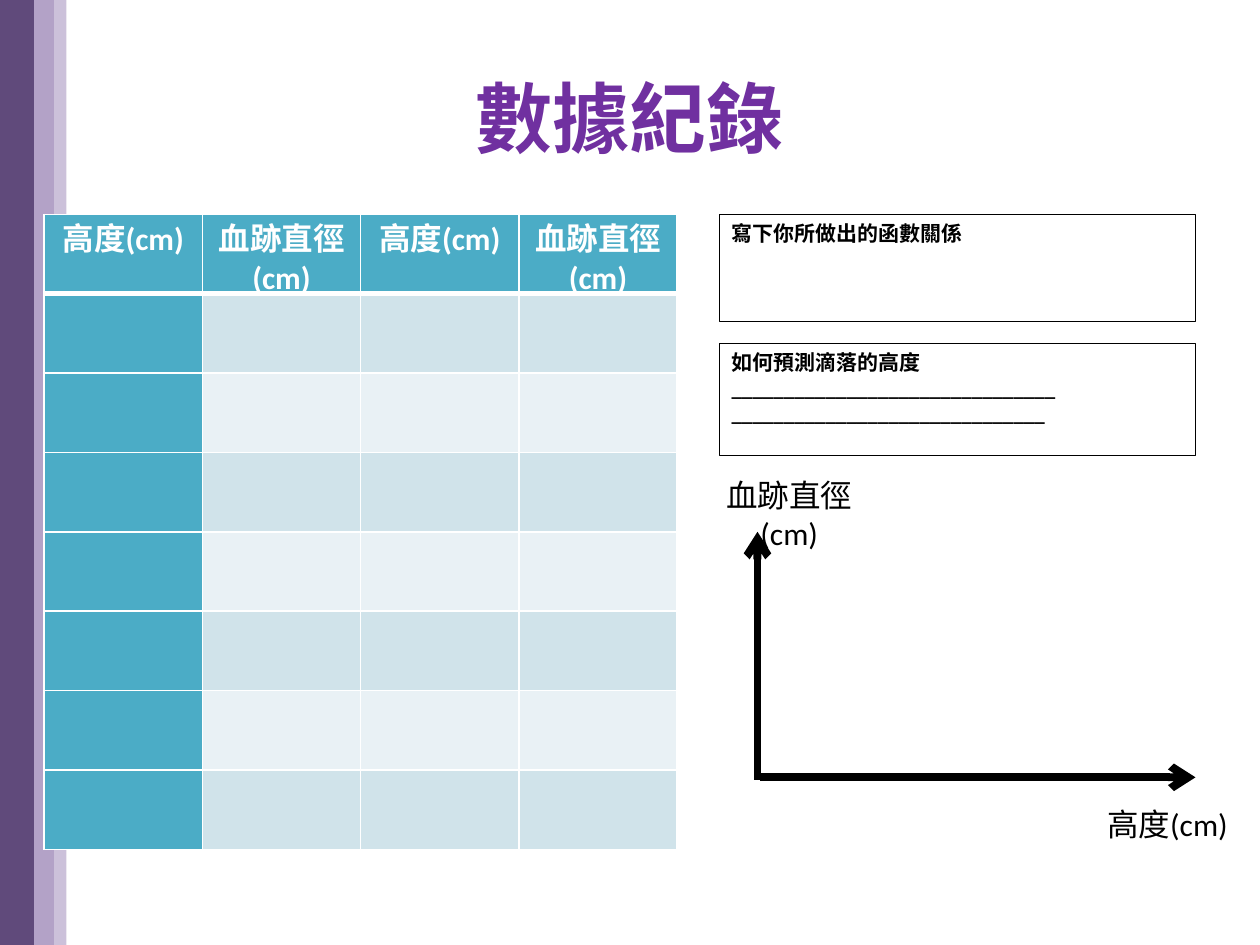
from lxml.etree import SubElement
from pptx import Presentation
from pptx.dml.color import RGBColor
from pptx.enum.shapes import MSO_CONNECTOR, MSO_SHAPE
from pptx.enum.text import MSO_ANCHOR, PP_ALIGN
from pptx.oxml.ns import qn
from pptx.util import Cm, Pt

COLORS = {
    "dark stripe": "604A7B", "middle stripe": "B3A2C7", "light stripe": "CCC1DA",
    "title": "7030A0", "header": "4BACC6", "odd row": "D0E3EA",
    "even row": "E9F1F5", "white": "FFFFFF", "black": "000000",
}
CJK_FONT = "Noto Sans CJK SC"


def format_text(text_frame, size, color="black", bold=False, align=None,
                font="Calibri", east_asian=CJK_FONT):
    text_frame.word_wrap = True
    for paragraph in text_frame.paragraphs:
        paragraph.alignment = align
        for run in paragraph.runs:
            run.font.size = Pt(size)
            run.font.bold = bold
            run.font.name = font
            run.font.color.rgb = RGBColor.from_string(COLORS[color])
            SubElement(run.font._element, qn("a:ea"), typeface=east_asian)


def add_rectangle(left, top, width, height, color):
    shape = slide.shapes.add_shape(MSO_SHAPE.RECTANGLE, Cm(left), Cm(top), Cm(width), Cm(height))
    shape.shadow.inherit = False
    shape.fill.solid()
    shape.fill.fore_color.rgb = RGBColor.from_string(COLORS[color])
    shape.line.fill.background()
    return shape


presentation = Presentation()
presentation.slide_width, presentation.slide_height = Cm(25.4), Cm(19.05)
slide = presentation.slides.add_slide(presentation.slide_layouts[6])

# Stripes along the left edge
for left, width, color in [(0, 0.7, "dark stripe"), (0.69, 0.4, "middle stripe"),
                           (1.09, 0.25, "light stripe")]:
    add_rectangle(left, 0, width, 19.05, color)

# Title
title = slide.shapes.add_textbox(Cm(1.27), Cm(0.76), Cm(22.86), Cm(3.18))
title.text_frame.text = "數據紀錄"
title.text_frame.vertical_anchor = MSO_ANCHOR.MIDDLE
format_text(title.text_frame, 44, "title", True, PP_ALIGN.CENTER, CJK_FONT)

# Data table
headers = ["高度(cm)", "血跡直徑(cm)"] * 2
row_count = 8
table = slide.shapes.add_table(row_count, len(headers), Cm(0.89), Cm(4.32),
                               Cm(12.76), Cm(12.8)).table
for column in table.columns:
    column.width = Cm(3.19)
for row_index, row in enumerate(table.rows):
    row.height = Cm(1.6)
    for column_index, cell in enumerate(row.cells):
        if row_index == 0:
            cell.text_frame.text = headers[column_index]
            format_text(cell.text_frame, 18, "white", True, PP_ALIGN.CENTER)
            cell.margin_left = cell.margin_right = Cm(0.18)
            cell.margin_top = cell.margin_bottom = 0
        # Thin white borders, thicker below the header
        thick_side = {0: "lnB", 1: "lnT"}.get(row_index)
        properties = cell._tc.get_or_add_tcPr()
        for side in ("lnL", "lnR", "lnT", "lnB"):
            width = Pt(3 if side == thick_side else 1)
            border = SubElement(properties, qn(f"a:{side}"), w=str(width))
            border_fill = SubElement(border, qn("a:solidFill"))
            SubElement(border_fill, qn("a:srgbClr"), val=COLORS["white"])
        if row_index == 0 or column_index == 0:
            color = "header"
        else:
            color = "odd row" if row_index % 2 else "even row"
        cell.fill.solid()
        cell.fill.fore_color.rgb = RGBColor.from_string(COLORS[color])

# Axes, both drawn from the origin to the arrow tip
for start_x, start_y, end_x, end_y in [(15.27, 15.72, 15.27, 10.72),
                                       (15.32, 15.67, 24.1, 15.67)]:
    axis = slide.shapes.add_connector(MSO_CONNECTOR.STRAIGHT, Cm(start_x), Cm(start_y),
                                      Cm(end_x), Cm(end_y))
    axis.line.width = Pt(4.5)
    axis.line.color.rgb = RGBColor.from_string(COLORS["black"])
    SubElement(axis.line._get_or_add_ln(), qn("a:tailEnd"), type="arrow")
    SubElement(axis._element.spPr, qn("a:effectLst"))

# Answer boxes
answer_lines = "_" * 31 + "\v" + "_" * 30
for top, height, text, east_asian in [
    (4.32, 2.16, "寫下你所做出的函數關係", CJK_FONT),
    (6.93, 2.26, "如何預測滴落的高度\n" + answer_lines, "Noto Sans CJK TC"),
]:
    box = add_rectangle(14.5, top, 9.6, height, "white")
    box.line.width = Pt(0.5)
    box.line.color.rgb = RGBColor.from_string(COLORS["black"])
    box.text_frame.text = text
    box.text_frame.vertical_anchor = MSO_ANCHOR.TOP
    format_text(box.text_frame, 12, bold=True, align=PP_ALIGN.LEFT, east_asian=east_asian)

# Axis labels
for left, top, width, text, align in [
    (22.07, 16.1, 3.4, "高度(cm)", PP_ALIGN.LEFT),
    (13.89, 9.47, 4.04, "血跡直徑(cm)", PP_ALIGN.CENTER),
]:
    label = slide.shapes.add_textbox(Cm(left), Cm(top), Cm(width), Cm(1.02))
    label.text_frame.text = text
    format_text(label.text_frame, 18, align=align)

presentation.save("out.pptx")
